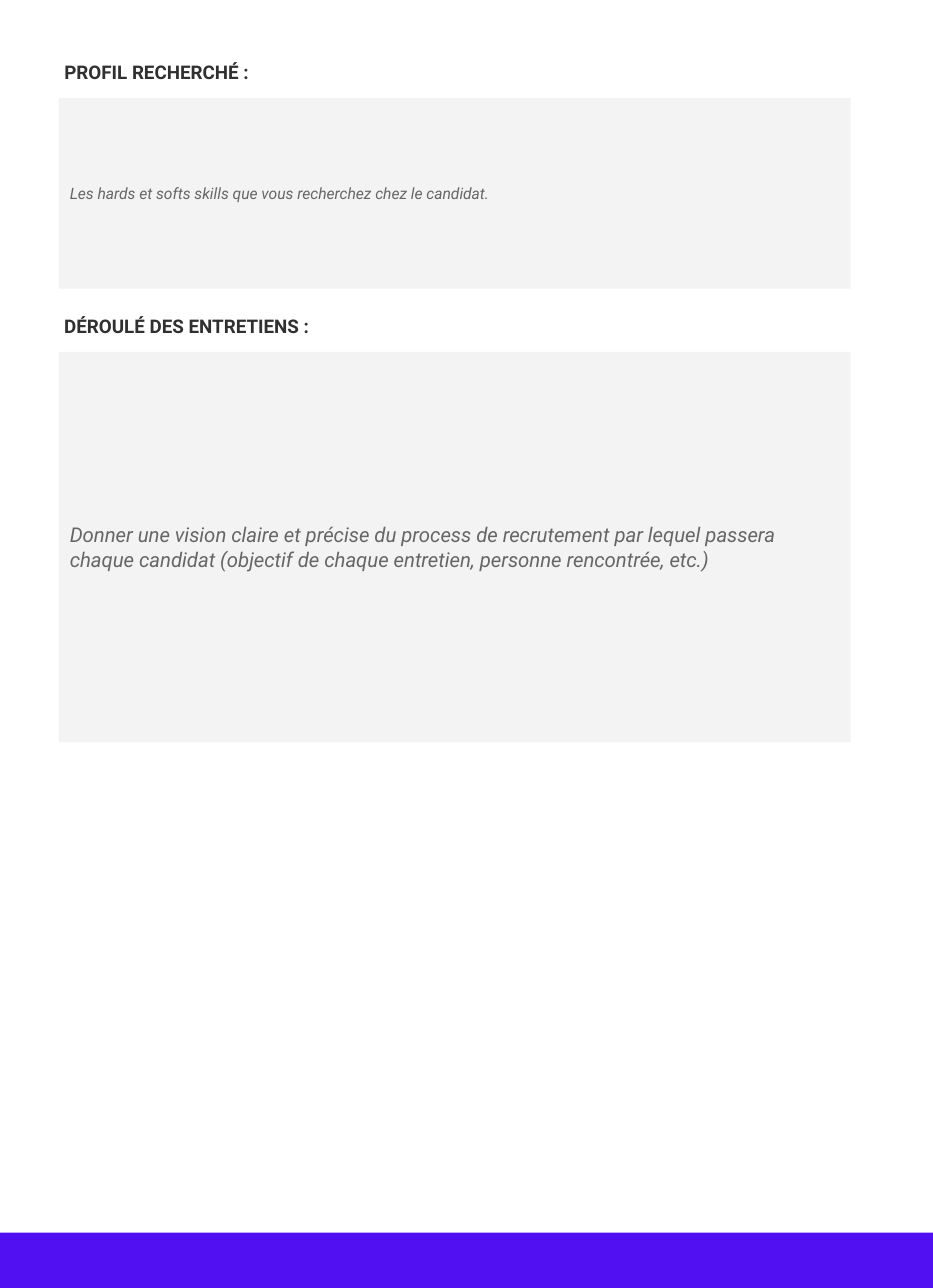
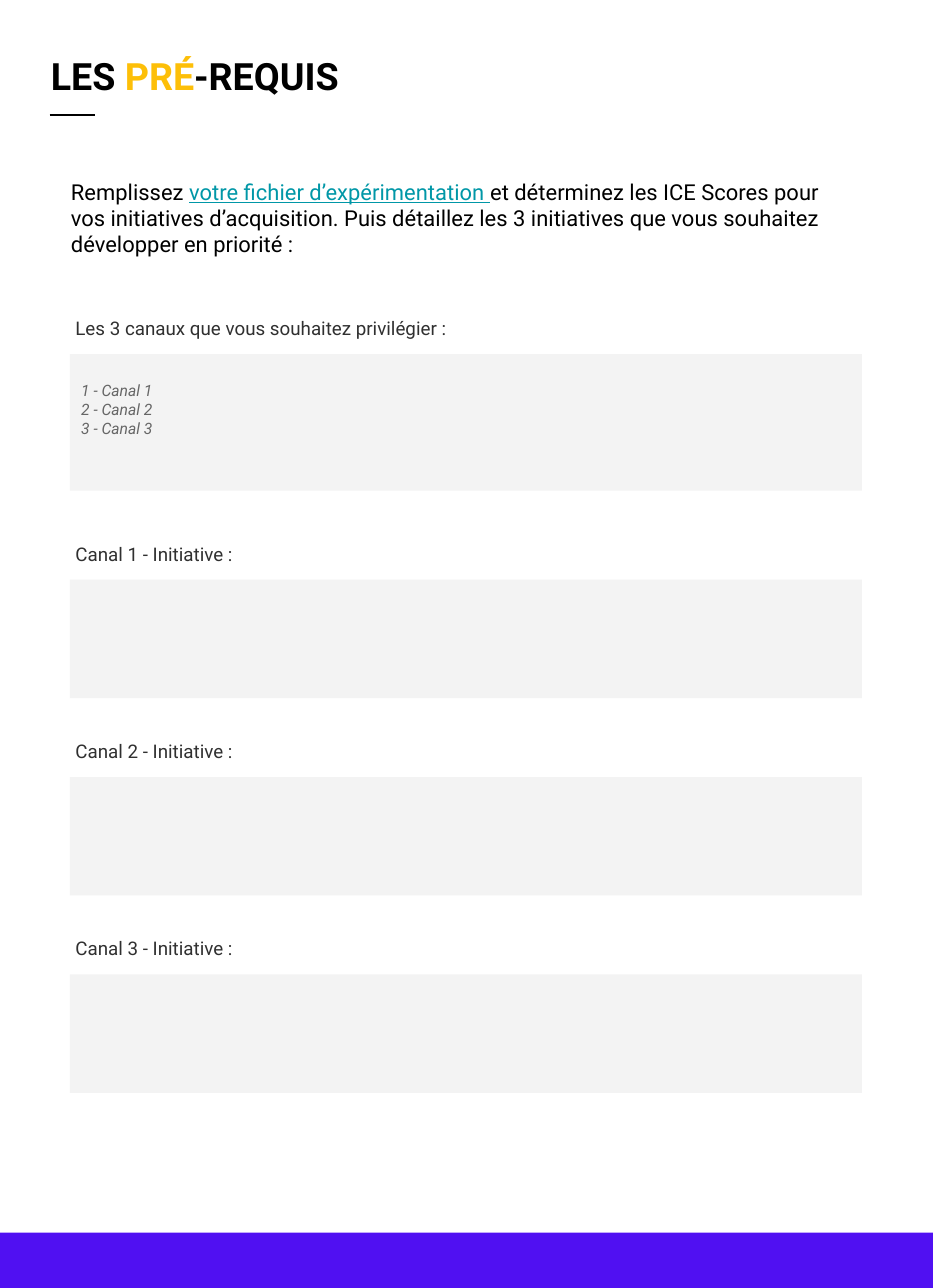
from pptx import Presentation
from pptx.dml.color import RGBColor
from pptx.enum.shapes import MSO_CONNECTOR as LINK, MSO_SHAPE as SHAPE
from pptx.enum.text import MSO_ANCHOR as ANCHOR, MSO_AUTO_SIZE as FIT, PP_ALIGN as ALIGN
from pptx.oxml.ns import qn
from pptx.util import Inches, Pt
from lxml.etree import SubElement

# Shared colours, text styles and measures
rgb = RGBColor.from_string
BAND, BOX, BLACK, GOLD, TEAL = "5010F2", "F3F3F3", "000000", "FDBF08", "0097A7"
LABEL, NOTE = "303030", "666666"
BASE = {"name": "Roboto", "bold": False, "italic": False, "underline": False}
WIDE, HIGH = 8.27, 11.42
DROP = 0.43  # from the top of a label to the top of its box


def paint(shape, hue):
    shape.shadow.inherit = False
    shape.fill.solid()
    shape.fill.fore_color.rgb = rgb(hue)
    shape.line.fill.background()


def write(shape, paras, size, anchor=ANCHOR.TOP, space=1.0, **style):
    """Each paragraph is a list of (text, colour, extra format) runs."""
    frame = shape.text_frame
    look = {"word_wrap": True, "auto_size": FIT.NONE, "vertical_anchor": anchor}
    for side in ("left", "top", "right", "bottom"):
        look["margin_" + side] = Inches(0.1)
    for key, value in look.items():
        setattr(frame, key, value)
    for num, runs in enumerate(paras):
        para = frame.add_paragraph() if num else frame.paragraphs[0]
        para.alignment, para.line_spacing = ALIGN.LEFT, space
        para.space_before = Pt(0)
        for text, hue, extra in runs:
            run = para.add_run()
            run.text = text
            for key, value in {**BASE, "size": Pt(size), **style, **extra}.items():
                setattr(run.font, key, value)
            run.font.color.rgb = rgb(hue)


deck = Presentation()
deck.slide_width, deck.slide_height = Inches(WIDE), Inches(HIGH)
job = deck.slides.add_slide(deck.slide_layouts[5])
needs = deck.slides.add_slide(deck.slide_layouts[1])
body = needs.placeholders[1]

# Sections: label, label top, box height, lines of the note, note size
profile = [
    ("PROFIL RECHERCHÉ :", 0.44, 1.69,
     ["Les hards et softs skills que vous recherchez chez le candidat."], 10),
    ("DÉROULÉ DES ENTRETIENS :", 2.69, 3.46,
     ["Donner une vision claire et précise du process de recrutement par lequel "
      "passera chaque candidat (objectif de chaque entretien, personne rencontrée, "
      "etc.)"], 13),
]
canals = [("Les 3 canaux que vous souhaitez privilégier :", 2.71, 1.21,
           [f"{n} - Canal {n}" for n in (1, 2, 3)], 10)]
canals += [(f"Canal {n} - Initiative :", 2.96 + 1.75 * n, 1.05, [], 10)
           for n in (1, 2, 3)]

# Footer band and labelled boxes of both slides
for slide, left, bold, parts in ((job, 0.47, True, profile),
                                 (needs, 0.57, False, canals)):
    shapes = slide.shapes
    band = shapes.add_shape(SHAPE.RECTANGLE, 0, Inches(10.93),
                            Inches(WIDE), Inches(0.49))
    paint(band, BAND)
    for num, (name, top, tall, lines, size) in enumerate(parts):
        spot = [Inches(v) for v in (left + 0.05, top + DROP, 7.02, tall)]
        if slide is needs and num == 0:
            box = body
            box.left, box.top, box.width, box.height = spot
        else:
            box = shapes.add_shape(SHAPE.RECTANGLE, *spot)
        paint(box, BOX)
        if lines:
            write(box, [[(line, NOTE, {})] for line in lines], size,
                  ANCHOR.MIDDLE, italic=True)

        spot = [Inches(v) for v in (left, top, 7.11, 0.49)]
        if slide is job and num == 0:
            label = shapes.title
            label.left, label.top, label.width, label.height = spot
        else:
            label = shapes.add_textbox(*spot)
        write(label, [[(name, LABEL, {})]], 12, bold=bold)

# Channel list: no bullets, raised a little in its box
body.text_frame.margin_bottom = Inches(0.33)
for para in body.text_frame.paragraphs:
    props = para._p.get_or_add_pPr()
    props.set("marL", "0")
    props.set("indent", "0")
    SubElement(props, qn("a:buNone"))

# Title with its short rule
title = needs.shapes.title
title.left, title.top, title.width, title.height = [
    Inches(v) for v in (0.35, 0.31, 7.17, 0.97)]
write(title, [[("LES ", BLACK, {}), ("PRÉ", GOLD, {}), ("-REQUIS", BLACK, {})]],
      24, space=1.15, bold=True)
rule = needs.shapes.add_connector(LINK.STRAIGHT, Inches(0.44), Inches(1.02),
                                  Inches(0.84), Inches(1.02))
rule.line.color.rgb, rule.line.width = rgb(BLACK), Pt(0.75)
SubElement(rule._element.spPr, qn("a:effectLst"))

# Introduction
intro = needs.shapes.add_textbox(Inches(0.53), Inches(1.48), Inches(7.02), Inches(1.05))
write(intro, [[
    ("Remplissez ", BLACK, {}),
    ("votre fichier d’expérimentation ", TEAL, {"underline": True}),
    ("et déterminez les ICE Scores pour vos initiatives d’acquisition. Puis détaillez "
     "les 3 initiatives que vous souhaitez développer en priorité :", BLACK, {}),
]], 14)

deck.save("out.pptx")
